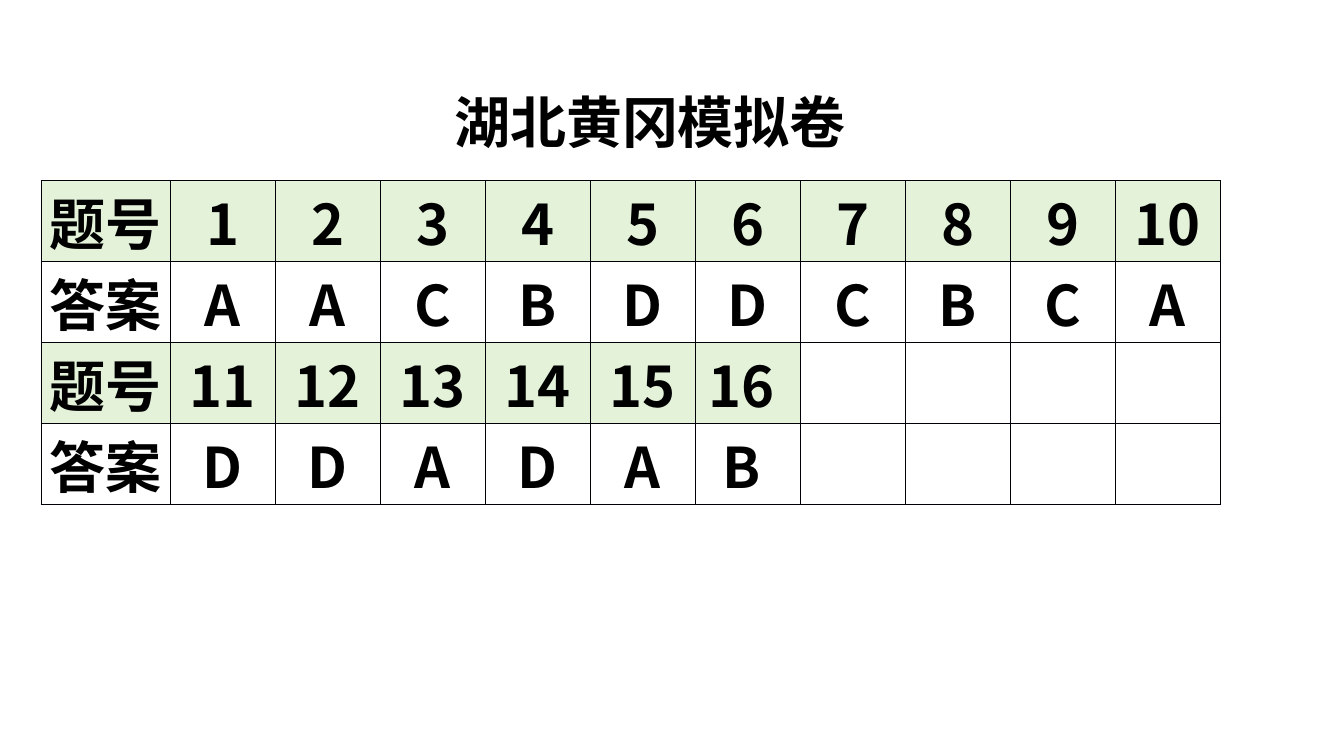
import pptx
import pptx.util
import pptx.dml.color
import pptx.enum.text
import pptx.oxml
import pptx.oxml.ns

Pt = pptx.util.Pt
FONT = "Noto Sans CJK SC"
BLACK = "000000"
GREEN = "E3F2D9"
RULE = "000008"
ROWS = [
    ["题号", *map(str, range(1, 11))],
    ["答案", *"AACBDDCBCA"],
    ["题号", *map(str, range(11, 16)), "16 "],
    ["答案", *"DDADA", "B "],
]


def color(code):
    return pptx.dml.color.RGBColor.from_string(code)


def write(frame, text):
    """Set one centred line of bold text."""
    frame.text = text
    line = frame.paragraphs[0]
    line.alignment = pptx.enum.text.PP_ALIGN.CENTER
    for run in line.runs:
        font = run.font
        font.size, font.bold, font.name = Pt(40), True, FONT
        font.color.rgb = color(BLACK)
        east = pptx.oxml.parse_xml(
            f'<a:ea {pptx.oxml.ns.nsdecls("a")} typeface="{FONT}"/>')
        font._element.append(east)
    return line


def border(cell):
    props = cell._tc.get_or_add_tcPr()
    for side in "LRTB":
        props.append(pptx.oxml.parse_xml(
            f'<a:ln{side} {pptx.oxml.ns.nsdecls("a")} w="{Pt(0.5)}">'
            f'<a:solidFill><a:srgbClr val="{RULE}"/></a:solidFill>'
            f'</a:ln{side}>'))


def title(slide, left, top, width, height):
    box = slide.shapes.add_textbox(Pt(left), Pt(top), Pt(width), Pt(height))
    frame = box.text_frame
    frame.word_wrap = True
    frame.vertical_anchor = pptx.enum.text.MSO_ANCHOR.MIDDLE
    write(frame, "湖北黄冈模拟卷").line_spacing = 0.9


def answers(slide, left, top, width, height):
    """Draw the answer key, with the question numbers on green."""
    count = len(ROWS[0])
    table = slide.shapes.add_table(
        len(ROWS), count, Pt(left), Pt(top), Pt(width), Pt(height)).table
    table.first_row = table.horz_banding = False
    head = 92.2
    for i, col in enumerate(table.columns):
        col.width = Pt((width - head) / (count - 1) if i else head)
    for i, row in enumerate(table.rows):
        row.height = Pt(height / len(ROWS))
        for j, cell in enumerate(row.cells):
            border(cell)
            cell.vertical_anchor = pptx.enum.text.MSO_ANCHOR.MIDDLE
            cell.margin_left = cell.margin_right = Pt(5)
            cell.margin_top = cell.margin_bottom = 0
            filled = j < len(ROWS[i])
            if filled:
                write(cell.text_frame, ROWS[i][j])
            if filled and i % 2 == 0:
                cell.fill.solid()
                cell.fill.fore_color.rgb = color(GREEN)
            else:
                cell.fill.background()


def main():
    deck = pptx.Presentation()
    deck.slide_width, deck.slide_height = Pt(960), Pt(540)
    slide = deck.slides.add_slide(deck.slide_layouts[6])
    title(slide, 64, 43.2, 800.6, 92.9)
    answers(slide, 29.5, 128.9, 842.2, 231.4)
    deck.save("out.pptx")


if __name__ == "__main__":
    main()
